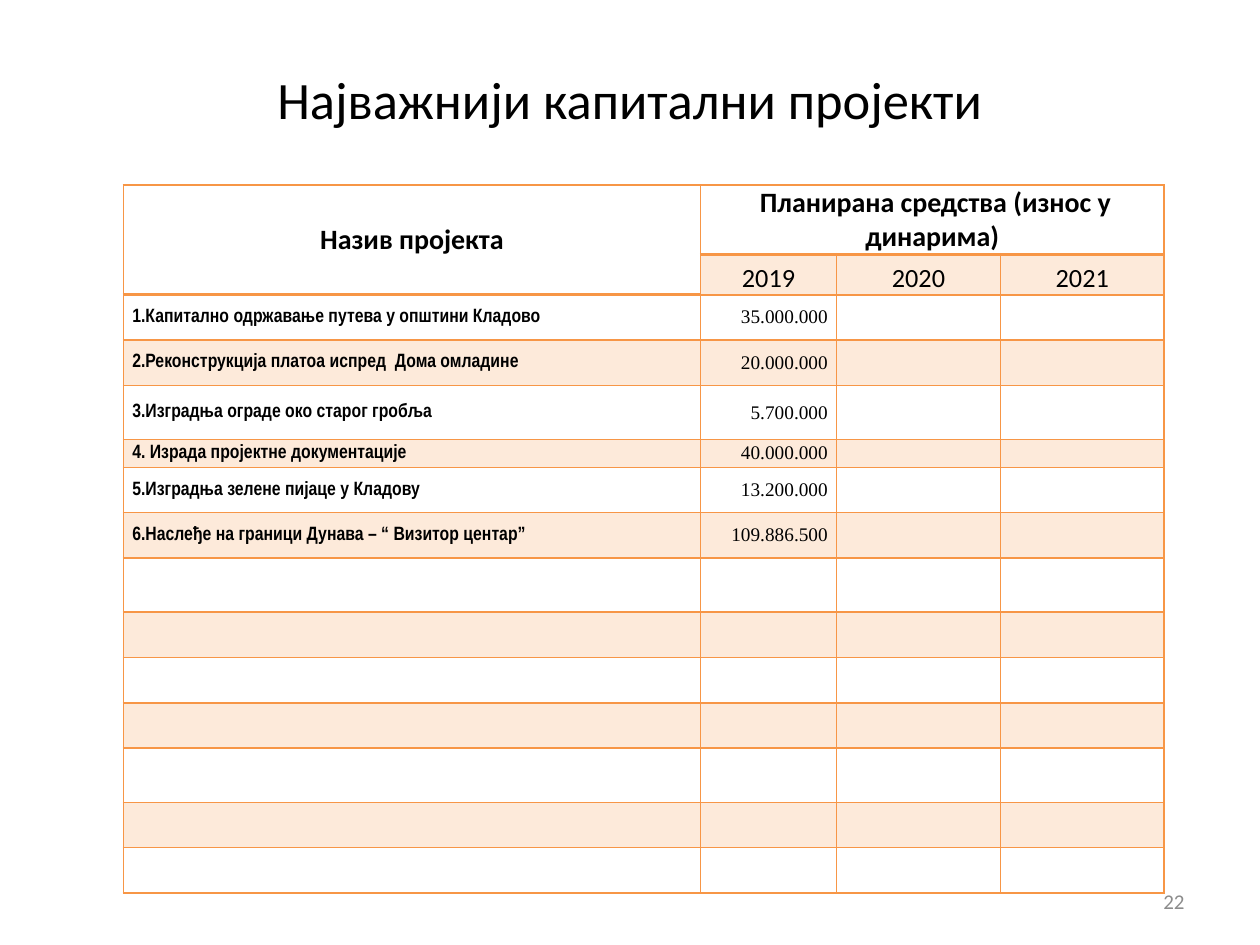
from pptx import Presentation
from pptx.dml.color import RGBColor
from pptx.enum.text import MSO_ANCHOR as Anchor, PP_ALIGN as Align
from pptx.oxml.ns import qn
from pptx.util import Inches, Pt
from lxml.etree import SubElement, Element

ORANGE = "F79646"
BLACK = "000000"
GRAY = "8C8C8C"
TINT_PERCENT = 20

COLUMN_WIDTHS = [4.58, 1.08, 1.3, 1.3]
ROW_HEIGHTS = [0.55, 0.32, 0.36, 0.36, 0.43, 0.22, 0.36, 0.36,
               0.43, 0.36, 0.36, 0.36, 0.43, 0.36, 0.36]
YEARS = ["2019", "2020", "2021"]
PROJECTS = [
    ("1.Капитално одржавање путева у општини Кладово", "35.000.000"),
    ("2.Реконструкција платоа испред  Дома омладине", "20.000.000"),
    ("3.Изградња ограде око старог гробља", "5.700.000"),
    ("4. Израда пројектне документације", "40.000.000"),
    ("5.Изградња зелене пијаце у Кладову", "13.200.000"),
    ("6.Наслеђе на граници Дунава – “ Визитор центар”", "109.886.500"),
]


def rgb(color):
    return RGBColor.from_string(color)


class SlideBuilder:
    def __init__(self, slide):
        self.slide = slide

    def put_text(self, frame, text, size, align, font="Calibri", color=BLACK, bold=False):
        paragraph = frame.paragraphs[0]
        paragraph.text = text
        paragraph.alignment = align
        for run in paragraph.runs:
            run.font.size = Pt(size)
            run.font.name = font
            run.font.bold = bold
            run.font.color.rgb = rgb(color)

    def title(self, text, left, top, width, height):
        heading = self.slide.shapes.title
        heading.left, heading.top = Inches(left), Inches(top)
        heading.width, heading.height = Inches(width), Inches(height)
        heading.text_frame.vertical_anchor = Anchor.MIDDLE
        self.put_text(heading.text_frame, text, 30, Align.CENTER)

    def page_number(self, text, left, top, width, height):
        number = self.slide.shapes.add_textbox(
            Inches(left), Inches(top), Inches(width), Inches(height))
        number.text_frame.word_wrap = True
        number.text_frame.vertical_anchor = Anchor.MIDDLE
        self.put_text(number.text_frame, text, 12, Align.RIGHT, color=GRAY)

    def table(self, left, top, widths, heights):
        table = self.slide.shapes.add_table(
            len(heights), len(widths), Inches(left), Inches(top),
            Inches(sum(widths)), Inches(sum(heights))).table
        table.first_row = table.horz_banding = False
        for column, width in zip(table.columns, widths):
            column.width = Inches(width)
        for row, height in zip(table.rows, heights):
            row.height = Inches(height)
        return table

    def style_cell(self, cell, tinted, top_line=1, bottom_line=1):
        cell.margin_left = cell.margin_right = Inches(0.07)
        cell.margin_top = cell.margin_bottom = 0
        cell.vertical_anchor = Anchor.MIDDLE
        if tinted:
            cell.fill.solid()
            cell.fill.fore_color.rgb = rgb(ORANGE)
        else:
            cell.fill.background()
        properties = cell._tc.get_or_add_tcPr()
        if tinted:
            tint = properties.find(qn("a:solidFill"))[0]
            SubElement(tint, qn("a:alpha"), val=str(TINT_PERCENT * 1000))
        borders = {"a:lnL": 1, "a:lnR": 1, "a:lnT": top_line, "a:lnB": bottom_line}
        for position, (side, points) in enumerate(borders.items()):
            line = Element(qn(side), w=str(Pt(points)))
            SubElement(SubElement(line, qn("a:solidFill")), qn("a:srgbClr"), val=ORANGE)
            properties.insert(position, line)
        paragraph = cell.text_frame.paragraphs[0]
        SubElement(paragraph._p, qn("a:endParaRPr"), sz="1100")


def thick_after(row, column):
    return (row == 0 and column > 0) or (row == 1 and column == 0)


def build_projects_table(builder):
    table = builder.table(0.98, 1.47, COLUMN_WIDTHS, ROW_HEIGHTS)
    for row in range(len(ROW_HEIGHTS)):
        for column in range(len(COLUMN_WIDTHS)):
            tinted = row % 2 == 1 and (row, column) != (1, 0)
            merged_name = (row, column) == (0, 0)
            builder.style_cell(
                table.cell(row, column), tinted,
                top_line=2 if thick_after(row - 1, column) else 1,
                bottom_line=2 if merged_name or thick_after(row, column) else 1)

    name_header, funds_header = table.cell(0, 0), table.cell(0, 1)
    name_header.merge(table.cell(1, 0))
    funds_header.merge(table.cell(0, 3))
    funds_header.vertical_anchor = Anchor.BOTTOM
    builder.put_text(name_header.text_frame, "Назив пројекта", 16, Align.CENTER, bold=True)
    builder.put_text(funds_header.text_frame, " Планирана средства (износ у динарима)",
                     16, Align.CENTER, bold=True)
    for column, year in enumerate(YEARS, 1):
        year_header = table.cell(1, column)
        year_header.vertical_anchor = Anchor.BOTTOM
        builder.put_text(year_header.text_frame, year, 15, Align.CENTER)
    for row, (project, amount) in enumerate(PROJECTS, 2):
        builder.put_text(table.cell(row, 0).text_frame, project, 11, Align.LEFT,
                         font="Arial Narrow", bold=True)
        builder.put_text(table.cell(row, 1).text_frame, amount, 11, Align.RIGHT,
                         font="Times New Roman")


def main():
    presentation = Presentation()
    presentation.slide_width = Inches(10)
    presentation.slide_height = Inches(7.5)
    builder = SlideBuilder(presentation.slides.add_slide(presentation.slide_layouts[5]))
    build_projects_table(builder)
    builder.page_number("22", 7.17, 6.95, 2.33, 0.4)
    builder.title("Најважнији капитални пројекти", 0.5, 0.3, 9, 0.96)
    presentation.save("out.pptx")


if __name__ == "__main__":
    main()
